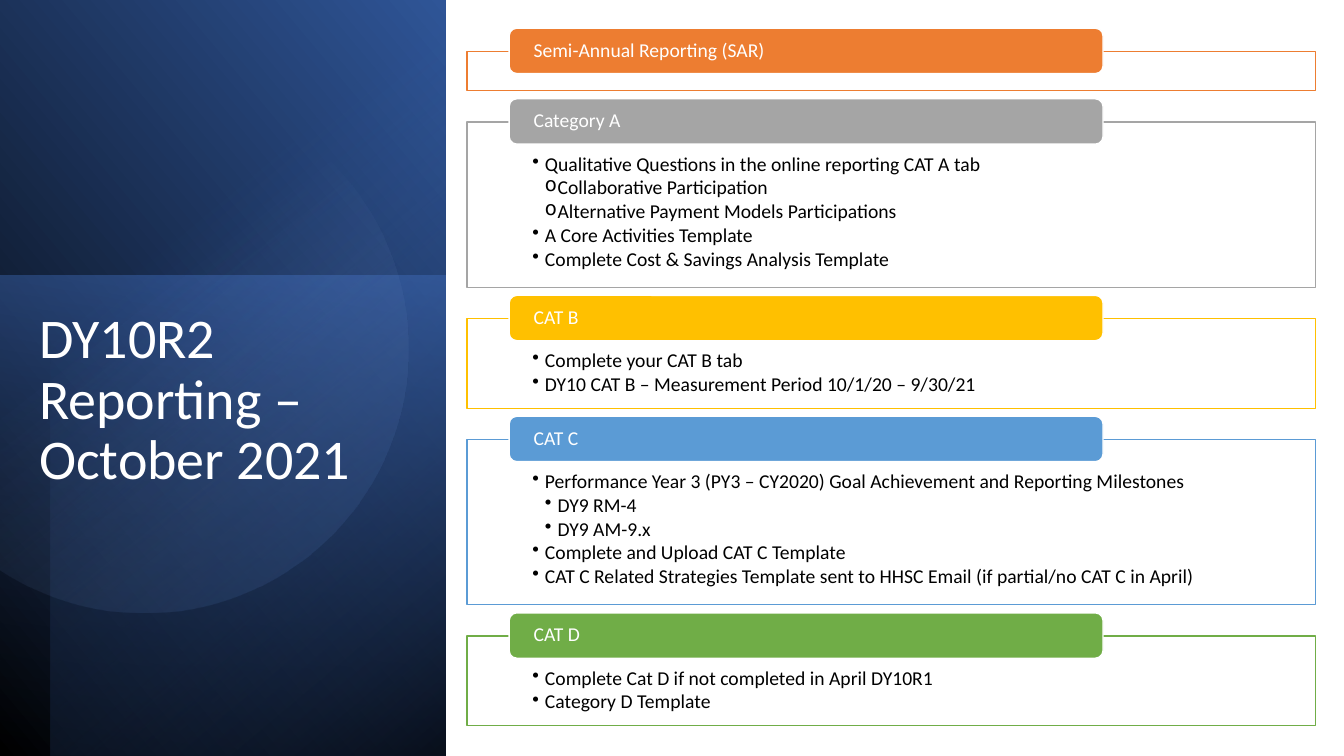
import math
import pptx
import pptx.util
import pptx.dml.color
import pptx.enum.shapes
import pptx.enum.text
import pptx.oxml
import pptx.oxml.ns

PX = 9144  # 100 px to the inch
FONT = "Calibri"
COLORS = {
    "white": "FFFFFF", "black": "000000", "navy": "203864", "deep": "2F5597",
    "blue": "4472C4", "pale": "8FAADC", "orange": "ED7D31", "gray": "A5A5A5",
    "gold": "FFC000", "sky": "5B9BD5", "green": "70AD47",
}
RECT = pptx.enum.shapes.MSO_SHAPE.RECTANGLE
ROUND = pptx.enum.shapes.MSO_SHAPE.ROUNDED_RECTANGLE
ANCHOR = pptx.enum.text.MSO_ANCHOR

# Each panel: color, heading, list of (level, bullet, text)
PANELS = [
    ("orange", "Semi-Annual Reporting (SAR)", []),
    ("gray", "Category A", [
        (1, "•", "Qualitative Questions in the online reporting CAT A tab"),
        (2, "o", "Collaborative Participation"),
        (2, "o", "Alternative Payment Models Participations"),
        (1, "•", "A Core Activities Template"),
        (1, "•", "Complete Cost & Savings Analysis Template")]),
    ("gold", "CAT B", [
        (1, "•", "Complete your CAT B tab"),
        (1, "•", "DY10 CAT B – Measurement Period 10/1/20 – 9/30/21")]),
    ("sky", "CAT C", [
        (1, "•", "Performance Year 3 (PY3 – CY2020) Goal Achievement and Reporting Milestones"),
        (2, "•", "DY9 RM-4"),
        (2, "•", "DY9 AM-9.x"),
        (1, "•", "Complete and Upload CAT C Template"),
        (1, "•", "CAT C Related Strategies Template sent to HHSC Email (if partial/no CAT C in April)")]),
    ("green", "CAT D", [
        (1, "•", "Complete Cat D if not completed in April DY10R1"),
        (1, "•", "Category D Template")]),
]


def px(*sizes):
    return [round(size * PX) for size in sizes]


def rgb(name):
    return pptx.dml.color.RGBColor.from_string(COLORS[name])


def add_box(slide, kind, box, fill, line):
    shape = slide.shapes.add_shape(kind, *px(*box))
    shape.shadow.inherit = False
    shape.fill.solid()
    shape.fill.fore_color.rgb = rgb(fill)
    shape.line.color.rgb = rgb(line)
    shape.line.width = pptx.util.Pt(1)
    return shape


def set_frame(shape, insets, anchor):
    frame = shape.text_frame
    frame.word_wrap = True
    frame.vertical_anchor = anchor
    (frame.margin_left, frame.margin_top,
     frame.margin_right, frame.margin_bottom) = px(*insets)
    return frame


def style(para, size, color):
    para.alignment = pptx.enum.text.PP_ALIGN.LEFT
    para.line_spacing = 0.9
    for run in para.runs:
        run.font.name = FONT
        run.font.size = pptx.util.Pt(size)
        run.font.color.rgb = rgb(color)


def set_bullet(para, level, mark):
    para.level = level
    props = para._p.get_or_add_pPr()
    props.set("marL", str(px(level * 12.5)[0]))
    props.set("indent", str(px(-12.5)[0]))
    bullet = pptx.oxml.parse_xml(f'<a:buChar {pptx.oxml.ns.nsdecls("a")} char="{mark}"/>')
    props.append(bullet)


def set_blend(shape, stops, angle):
    """Fill with a gradient; stops are (place, color, opacity) in percent."""
    shape.shadow.inherit = False
    shape.line.fill.background()
    marks = "".join(
        f'<a:gs pos="{place * 1000}"><a:srgbClr val="{COLORS[color]}">'
        f'<a:alpha val="{alpha * 1000}"/></a:srgbClr></a:gs>'
        for place, color, alpha in stops)
    blend = pptx.oxml.parse_xml(
        f'<a:gradFill {pptx.oxml.ns.nsdecls("a")} rotWithShape="1"><a:gsLst>{marks}</a:gsLst>'
        f'<a:lin ang="{angle * 60000}" scaled="0"/></a:gradFill>')
    props = shape._element.spPr
    for old in props.findall(pptx.oxml.ns.qn("a:solidFill")):
        props.remove(old)
    props.find(pptx.oxml.ns.qn("a:ln")).addprevious(blend)


def add_glow(slide, box, turn, flip, stops, angle):
    """Cover the box with a blended rectangle turned by a quarter."""
    x, y, w, h = box
    shape = slide.shapes.add_shape(RECT, *px(x + (w - h) / 2, y + (h - w) / 2, h, w))
    shape.rotation = turn
    if flip:
        shape._element.spPr.xfrm.set("flipH", "1")
    set_blend(shape, stops, angle)


def add_disc(slide, x, y, radius):
    """Draw a disc cut off by the left edge of the slide."""
    limit = math.acos(-x / radius)
    steps = 90
    turns = [limit * (2 * i / steps - 1) for i in range(steps + 1)]
    points = [px(x + radius * math.cos(t), y + radius * math.sin(t)) for t in turns]
    builder = slide.shapes.build_freeform(*points[0])
    builder.add_line_segments(points[1:], close=True)
    set_blend(builder.convert_to_shape(), [(39, "pale", 0), (100, "deep", 26)], 52)


def add_side(slide, box):
    x, y, w, h = box
    # Layered blends
    add_glow(slide, box, 90, True, [(0, "black", 100), (100, "deep", 100)], 310)
    add_glow(slide, (x, y + 273, w, h - 273), 270, False,
             [(0, "blue", 50), (100, "navy", 0)], 190)
    add_glow(slide, (x + 50, y, w - 50, h), 270, True,
             [(0, "black", 59), (69, "blue", 0)], 220)
    add_disc(slide, x + 143, y + 346, 262)
    # Title
    title = slide.shapes.add_textbox(*px(x + 29, y + 303, 358, 336))
    frame = set_frame(title, (10, 5, 10, 5), ANCHOR.TOP)
    frame.text = "DY10R2 Reporting – October 2021"
    style(frame.paragraphs[0], 40, "white")


def add_panel(slide, box, color, head, items):
    x, y, w, h = box
    # Frame with its list
    body = add_box(slide, RECT, (x, y + 23, w, h - 23), "white", color)
    if items:
        frame = set_frame(body, (65, 32, 65, 11), ANCHOR.TOP)
        frame.text = "\n".join(text for level, mark, text in items)
        for para, (level, mark, text) in zip(frame.paragraphs, items):
            style(para, 14, "black")
            para.space_after = pptx.util.Pt(1.8)
            set_bullet(para, level, mark)
    # Heading tab
    tab = add_box(slide, ROUND, (x + 42, y, 589, 45), color, "white")
    frame = set_frame(tab, (22, 0, 22, 0), ANCHOR.MIDDLE)
    frame.text = head
    style(frame.paragraphs[0], 14, "white")


def add_stack(slide, box):
    x, y, w = box
    for color, head, items in PANELS:
        tall = 62 + 25 * len(items)
        add_panel(slide, (x, y, w, tall), color, head, items)
        y += tall + 8


def main():
    deck = pptx.Presentation()
    deck.slide_width, deck.slide_height = px(1333, 750)
    slide = deck.slides.add_slide(deck.slide_layouts[6])
    add_side(slide, (0, 0, 442, 750))
    add_stack(slide, (463, 28, 842))
    deck.save("out.pptx")


if __name__ == "__main__":
    main()
